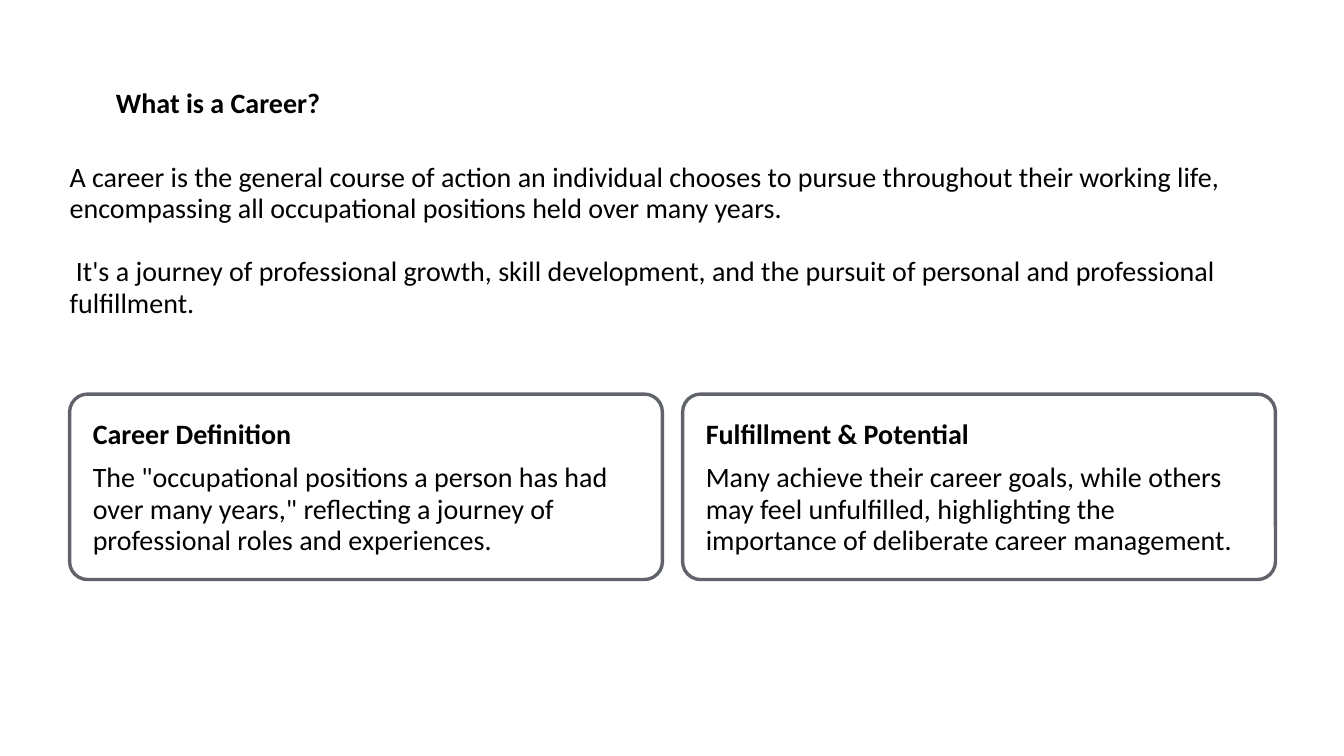
from dataclasses import dataclass

from lxml import etree
from pptx import Presentation
from pptx.dml.color import RGBColor
from pptx.enum.shapes import MSO_SHAPE
from pptx.enum.text import MSO_ANCHOR, MSO_AUTO_SIZE, PP_ALIGN
from pptx.oxml.ns import qn
from pptx.util import Inches, Pt

ROUNDED_RECTANGLE = MSO_SHAPE.ROUNDED_RECTANGLE
TOP = MSO_ANCHOR.TOP
NO_AUTOFIT = MSO_AUTO_SIZE.NONE
LEFT = PP_ALIGN.LEFT

TITLE = "What is a Career?"
DEFINITION = [
    "A career is the general course of action an individual chooses to pursue "
    "throughout their working life, encompassing all occupational positions "
    "held over many years.",
    " It's a journey of professional growth, skill development, and the pursuit "
    "of personal and professional fulfillment.",
]
CARDS = [
    (
        "Career Definition",
        'The "occupational positions a person has had over many years," '
        "reflecting a journey of professional roles and experiences.",
    ),
    (
        "Fulfillment & Potential",
        "Many achieve their career goals, while others may feel unfulfilled, "
        "highlighting the importance of deliberate career management.",
    ),
]


@dataclass(frozen=True)
class Theme:
    font: str = "Calibri"
    size: float = 20
    text: str = "000000"
    border: str = "60646A"
    border_width: float = 2.4
    title_spacing: float = 46.7
    heading_spacing: float = 23.3
    body_spacing: float = 22.5


THEME = Theme()
MARGIN = 0.69
CARD_TOP, CARD_WIDTH, CARD_HEIGHT, CARD_GAP = 3.91, 5.88, 1.84, 0.2
CARD_PADDING = 0.23
HEADING_HEIGHT, CARD_BODY_OFFSET, CARD_BODY_HEIGHT = 0.32, 0.67, 0.95


def place(shape, left, top, width, height):
    shape.left, shape.top = Inches(left), Inches(top)
    shape.width, shape.height = Inches(width), Inches(height)


def write_text(shape, paragraphs, line_spacing=THEME.body_spacing, bold=False, gap=0):
    frame = shape.text_frame
    frame.margin_left = frame.margin_right = frame.margin_top = frame.margin_bottom = 0
    frame.word_wrap = True
    frame.auto_size = NO_AUTOFIT
    frame.vertical_anchor = TOP
    for index, text in enumerate(paragraphs):
        paragraph = frame.add_paragraph() if index else frame.paragraphs[0]
        paragraph.text = text
        paragraph.alignment = LEFT
        paragraph.line_spacing = Pt(line_spacing)
        paragraph.space_before = Pt(gap if index else 0)
        properties = paragraph._p.get_or_add_pPr()
        properties.set("marL", "0")
        properties.set("indent", "0")
        etree.SubElement(properties, qn("a:buNone"))
        font = paragraph.font
        font.name = THEME.font
        font.size = Pt(THEME.size)
        font.bold = bold
        font.color.rgb = RGBColor.from_string(THEME.text)


def add_text(slide, text, left, top, width, height, **text_format):
    box = slide.shapes.add_textbox(
        Inches(left), Inches(top), Inches(width), Inches(height)
    )
    write_text(box, [text], **text_format)


def add_card(slide, left, heading, body):
    card = slide.shapes.add_shape(
        ROUNDED_RECTANGLE,
        Inches(left), Inches(CARD_TOP), Inches(CARD_WIDTH), Inches(CARD_HEIGHT),
    )
    card.adjustments[0] = 0.097
    card.shadow.inherit = False
    card.fill.background()
    card.line.color.rgb = RGBColor.from_string(THEME.border)
    card.line.width = Pt(THEME.border_width)
    text_left, text_top = left + CARD_PADDING, CARD_TOP + CARD_PADDING
    text_width = CARD_WIDTH - 2 * CARD_PADDING
    add_text(
        slide, heading, text_left, text_top, text_width, HEADING_HEIGHT,
        line_spacing=THEME.heading_spacing, bold=True,
    )
    add_text(
        slide, body, text_left, CARD_TOP + CARD_BODY_OFFSET,
        text_width, CARD_BODY_HEIGHT,
    )


def main():
    presentation = Presentation()
    presentation.slide_width = Inches(13.33)
    presentation.slide_height = Inches(7.5)
    slide = presentation.slides.add_slide(presentation.slide_layouts[1])

    title = slide.shapes.title
    place(title, 1.15, 0.53, 5.2, 0.65)
    write_text(title, [TITLE], line_spacing=THEME.title_spacing, bold=True)

    definition = slide.placeholders[1]
    place(definition, MARGIN, 1.6, 2 * CARD_WIDTH + CARD_GAP, 1.57)
    write_text(definition, DEFINITION, gap=THEME.body_spacing)

    for index, (heading, body) in enumerate(CARDS):
        add_card(slide, MARGIN + index * (CARD_WIDTH + CARD_GAP), heading, body)

    presentation.save("out.pptx")


if __name__ == "__main__":
    main()
